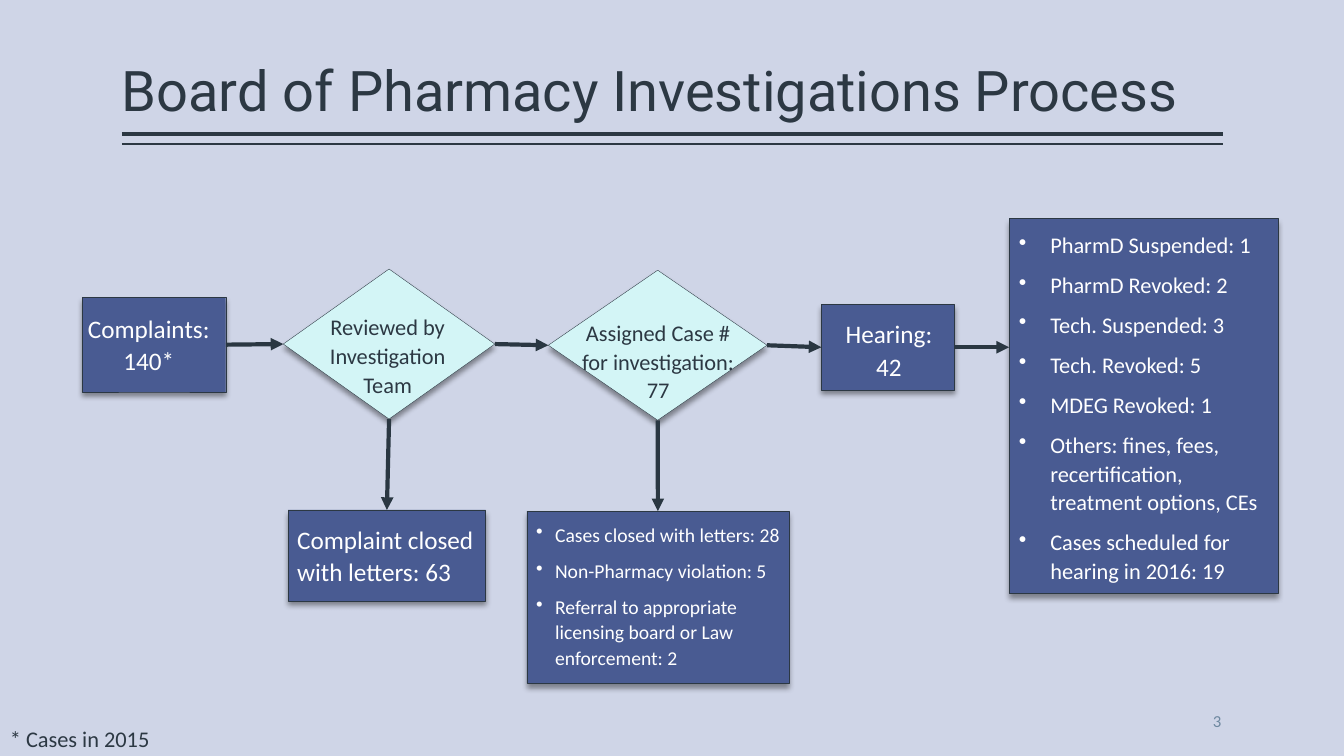
"""Build a slide that charts the investigations process of a pharmacy board."""
from lxml.etree import SubElement
from pptx import Presentation
from pptx.dml.color import RGBColor
from pptx.enum.shapes import MSO_CONNECTOR, MSO_SHAPE
from pptx.enum.text import MSO_ANCHOR, MSO_AUTO_SIZE, PP_ALIGN
from pptx.oxml.ns import qn
from pptx.util import Cm, Pt

COLORS = {"back": "CFD5E7", "ink": "2C3843", "arrow": "2A3742", "box": "495B92",
          "choice": "D3F5F6", "white": "FFFFFF", "number": "6E88A0"}
TITLE = "Board of Pharmacy Investigations Process"
RULES = [(3.38, 3), (3.63, 1)]
LEFT, RIGHT = 3.07, 30.81

NODES = {
    "complaints": ("box", (2.08, 7.49, 3.61, 2.39)),
    "review": ("choice", (7.14, 6.78, 5.33, 3.78)),
    "case": ("choice", (13.82, 6.81, 5.51, 3.78)),
    "hearing": ("box", (20.7, 7.67, 3.35, 2.16)),
    "outcomes": ("box", (25.43, 5.51, 6.78, 9.45)),
    "closed": ("box", (7.26, 12.85, 4.98, 2.29)),
    "results": ("box", (13.28, 12.88, 6.6, 4.34)),
}
ACROSS = [("complaints", "review"), ("review", "case"),
          ("case", "hearing"), ("hearing", "outcomes")]
DOWN = [("review", "closed"), ("case", "results")]

LABELS = [
    ((1.83, 7.72, 3.84, 1.91), "Complaints: 140*", 18, "white", PP_ALIGN.CENTER),
    ((7.85, 7.72, 3.84, 2.41), "Reviewed by Investigation Team", 16, "ink",
     PP_ALIGN.CENTER),
    ((14.17, 7.87, 4.83, 1.6), "Assigned Case # for investigation: 77", 16, "ink",
     PP_ALIGN.CENTER),
    ((20.88, 7.85, 3.05, 1.91), "Hearing: 42", 18, "white", PP_ALIGN.CENTER),
    ((7.24, 13.03, 5.11, 2.13), "Complaint closed with letters: 63", 18, "white",
     PP_ALIGN.LEFT),
]
LISTS = [
    ((13.26, 13, 7.09, 4.04), 14, 0.48, [
        "Cases closed with letters: 28",
        "Non-Pharmacy violation: 5",
        "Referral to appropriate licensing board or Law enforcement: 2"]),
    ((25.43, 5.66, 6.81, 9.3), 16, 0.79, [
        "PharmD Suspended: 1",
        "PharmD Revoked: 2",
        "Tech. Suspended: 3",
        "Tech. Revoked: 5",
        "MDEG Revoked: 1",
        "Others: fines, fees, recertification, treatment options, CEs",
        "Cases scheduled for hearing in 2016: 19"]),
]
NOTE = ((0, 18.14, 14.17, 0.94), "* Cases in 2015")
NUMBER = ((25.7, 17.65, 5.08, 1.02), "3")


def tint(name):
    return RGBColor.from_string(COLORS[name])


def place(spot):
    return [Cm(size) for size in spot]


def write(para, text, size, color, font="Calibri"):
    run = para.add_run()
    run.text = text
    run.font.size = Pt(size)
    run.font.name = font
    run.font.color.rgb = tint(color)


def add_text(slide, spot, lines, size, color, align=PP_ALIGN.LEFT,
             pitch=1.07, after=8, indent=0):
    frame = slide.shapes.add_textbox(*place(spot)).text_frame
    frame.word_wrap = True
    for i, line in enumerate(lines):
        para = frame.add_paragraph() if i else frame.paragraphs[0]
        para.alignment = align
        para.line_spacing = pitch
        para.space_after = Pt(after)
        if indent:
            props = para._p.get_or_add_pPr()
            props.set("marL", str(Cm(indent)))
            props.set("indent", str(-Cm(indent)))
            SubElement(props, qn("a:buChar"), char="•")
        write(para, line, size, color)
    return frame


def add_node(slide, kind, spot):
    form = MSO_SHAPE.RECTANGLE if kind == "box" else MSO_SHAPE.FLOWCHART_DECISION
    node = slide.shapes.add_shape(form, *place(spot))
    node.fill.solid()
    node.fill.fore_color.rgb = tint(kind)
    node.line.color.rgb = tint("ink")
    node.line.width = Pt(0.25)
    node.shadow.inherit = False
    effects = node._element.spPr.find(qn("a:effectLst"))
    shade = SubElement(effects, qn("a:outerShdw"), blurRad=str(Pt(4)),
                       dist=str(Pt(3)), dir="5400000", rotWithShape="0")
    black = SubElement(shade, qn("a:srgbClr"), val="000000")
    SubElement(black, qn("a:alpha"), val="40000")
    return node


def add_line(slide, start, end, color, width, head=False):
    line = slide.shapes.add_connector(MSO_CONNECTOR.STRAIGHT, *start, *end)
    line.line.color.rgb = tint(color)
    line.line.width = Pt(width)
    if head:
        SubElement(line.line._get_or_add_ln(), qn("a:tailEnd"), type="triangle")
    SubElement(line._element.spPr, qn("a:effectLst"))
    return line


def add_title(slide):
    title = slide.shapes.title
    title.left, title.top, title.width, title.height = place((LEFT, 0.2, 27.74, 3.05))
    frame = title.text_frame
    frame.auto_size = MSO_AUTO_SIZE.NONE
    frame.word_wrap = True
    frame.vertical_anchor = MSO_ANCHOR.BOTTOM
    frame.margin_left = frame.margin_right = 0
    para = frame.paragraphs[0]
    para.alignment = PP_ALIGN.LEFT
    para.line_spacing = 0.9
    write(para, TITLE, 40, "ink", "Roboto")


def add_flow(slide):
    nodes = {name: add_node(slide, *node) for name, node in NODES.items()}
    for first, last in ACROSS:
        a, b = nodes[first], nodes[last]
        mid = a.top + a.height // 2
        line = add_line(slide, (a.left + a.width, mid), (b.left, mid),
                        "arrow", 3, True)
        line.begin_connect(a, 3)
        if last != "outcomes":
            line.end_connect(b, 1)
    for first, last in DOWN:
        a, b = nodes[first], nodes[last]
        mid = a.left + a.width // 2
        line = add_line(slide, (mid, a.top + a.height), (mid, b.top),
                        "arrow", 3, True)
        line.begin_connect(a, 2)
        line.end_connect(b, 0)


def main():
    deck = Presentation()
    deck.slide_width, deck.slide_height = Cm(33.87), Cm(19.05)
    slide = deck.slides.add_slide(deck.slide_layouts[5])
    slide.background.fill.solid()
    slide.background.fill.fore_color.rgb = tint("back")
    for y, width in RULES:
        add_line(slide, place((LEFT, y)), place((RIGHT, y)), "ink", width)
    add_title(slide)
    add_flow(slide)
    for spot, text, size, color, align in LABELS:
        add_text(slide, spot, [text], size, color, align)
    for spot, size, indent, lines in LISTS:
        add_text(slide, spot, lines, size, "white", indent=indent)
    spot, text = NOTE
    add_text(slide, spot, [text], 16, "ink", pitch=1, after=0)
    spot, text = NUMBER
    frame = add_text(slide, spot, [text], 12, "number", PP_ALIGN.RIGHT, 1, 0)
    frame.vertical_anchor = MSO_ANCHOR.MIDDLE
    frame.margin_left = frame.margin_right = 0
    deck.save("out.pptx")


if __name__ == "__main__":
    main()
